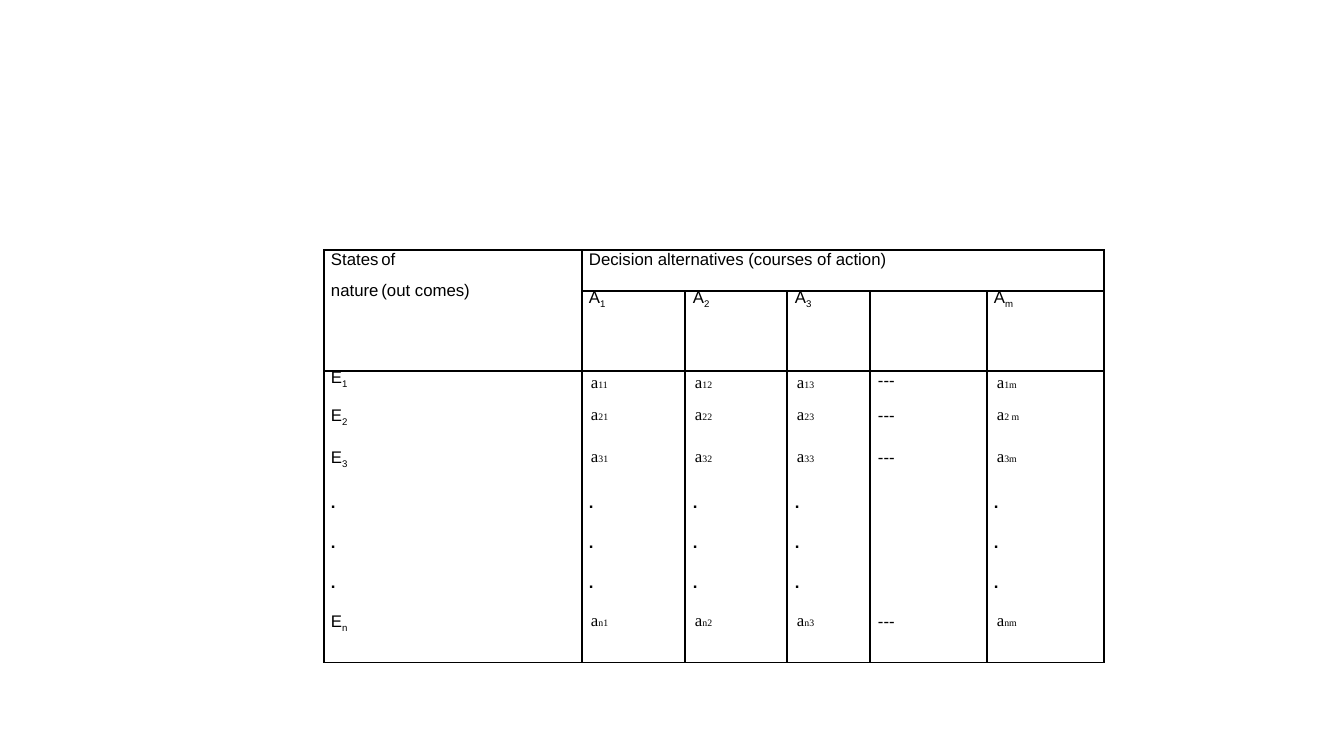
from lxml import etree
from pptx import Presentation
from pptx.dml.color import RGBColor
from pptx.oxml.ns import qn
from pptx.util import Emu, Pt

BLACK = RGBColor(0x00, 0x00, 0x00)
SANS, SERIF = "Arial", "Times New Roman"
SCALE = 914400 / 100.8

COLS = [258, 103, 102, 83, 117, 117]
ROWS = [41, 80, 35, 42, 45, 40, 40, 39, 51]
INSETS = [7, 7, 8, 8, 8, 7]
HEADS = {1: "1", 2: "2", 3: "3", 5: "m"}
STATES = {2: "1", 3: "2", 4: "3", 8: "n"}
GAPS = {3: 3.5, 4: 3.5, 5: 2.5, 6: 2.2, 7: 2.3, 8: 3.3}
BODY, LAST, DASH = 2, 8, 4


def px(count):
    return Emu(round(count * SCALE))


class Deck:
    def __init__(self, width, height):
        self.file = Presentation()
        self.file.slide_width, self.file.slide_height = px(width), px(height)
        self.slide = self.file.slides.add_slide(self.file.slide_layouts[6])

    def table(self, left, top, cols, rows):
        frame = self.slide.shapes.add_table(
            len(rows), len(cols), px(left), px(top), px(sum(cols)), px(sum(rows)))
        table = frame.table
        table.first_row = table.horz_banding = False
        for col, width in zip(table.columns, cols):
            col.width = px(width)
        for row, height in zip(table.rows, rows):
            row.height = px(height)
        return table

    def frame(self, cell, sides):
        """Clear the cell's margins and fill, and rule the sides named by L, R, T and B."""
        cell.margin_left = cell.margin_right = cell.margin_top = cell.margin_bottom = 0
        props = cell._tc.get_or_add_tcPr()
        for side in "LRTB":
            line = etree.SubElement(props, qn("a:ln" + side), w=str(Pt(1)))
            if side in sides:
                fill = etree.SubElement(line, qn("a:solidFill"))
                etree.SubElement(fill, qn("a:srgbClr"), val=str(BLACK))
            else:
                etree.SubElement(line, qn("a:noFill"))
        cell.fill.background()

    def font(self, run, size=12, face=SANS, bold=False):
        run.font.size, run.font.name, run.font.bold = Pt(size), face, bold
        run.font.color.rgb = BLACK

    def para(self, para, text, inset, lead=None, gap=None, tab=None, bold=False):
        para.text = text
        for run in para.runs:
            self.font(run, bold=bold)
        if lead:
            para.line_spacing = Pt(lead)
        if gap:
            para.space_before = Pt(gap)
        props = para._p.get_or_add_pPr()
        props.set("marL", str(px(inset)))
        props.set("indent", "0")
        if tab:
            stops = etree.SubElement(props, qn("a:tabLst"))
            etree.SubElement(stops, qn("a:tab"), pos=str(px(tab)), algn="l")

    def lower(self, para, mark):
        """Add a true subscript."""
        run = para.add_run()
        run.text = mark
        self.font(run)
        run.font._element.set("baseline", "-25000")

    def small(self, para, mark):
        """Set the letter in serif type and add its index in small type."""
        self.font(para.runs[0], face=SERIF)
        run = para.add_run()
        run.text = mark
        self.font(run, 7, SERIF)


def head(deck, table):
    names = table.cell(0, 0).text_frame
    deck.para(names.paragraphs[0], "States\tof", 7, 13.3, tab=100)
    deck.para(names.add_paragraph(), "nature\t(out comes)", 7, 21.5, 0.6, 85)
    title = table.cell(0, 1).text_frame.paragraphs[0]
    deck.para(title, "Decision alternatives (courses of action)", 7, 13.3)
    for col, mark in HEADS.items():
        para = table.cell(1, col).text_frame.paragraphs[0]
        deck.para(para, "A", INSETS[col], 13.3)
        deck.lower(para, mark)


def body(deck, table):
    for row in range(BODY, LAST + 1):
        gap = GAPS.get(row)
        state = STATES.get(row)
        for col, inset in enumerate(INSETS):
            para = table.cell(row, col).text_frame.paragraphs[0]
            lead = 13.3 if row == BODY else None
            if state is None:
                if col != DASH:
                    deck.para(para, ".", inset, gap=gap, bold=True)
            elif col == 0:
                deck.para(para, "E", inset, lead, gap)
                deck.lower(para, state)
            elif col == DASH:
                deck.para(para, "---", inset, lead, gap)
            else:
                deck.para(para, "a", 9 if col == 1 else 10,
                          lead and 14.9, gap and 3)
                space = " " if (state, col) == ("2", 5) else ""
                deck.small(para, state + space + HEADS[col])


def main():
    deck = Deck(1344, 756)
    table = deck.table(324, 250, COLS, ROWS)
    for row in range(len(ROWS)):
        sides = "LRTB" if row < BODY else "LR"
        sides += {BODY: "T", LAST: "B"}.get(row, "")
        for col in range(len(COLS)):
            deck.frame(table.cell(row, col), sides)
    table.cell(0, 0).merge(table.cell(1, 0))
    table.cell(0, 1).merge(table.cell(0, 5))
    table.cell(5, DASH).merge(table.cell(7, DASH))
    head(deck, table)
    body(deck, table)
    deck.file.save("out.pptx")


if __name__ == "__main__":
    main()
